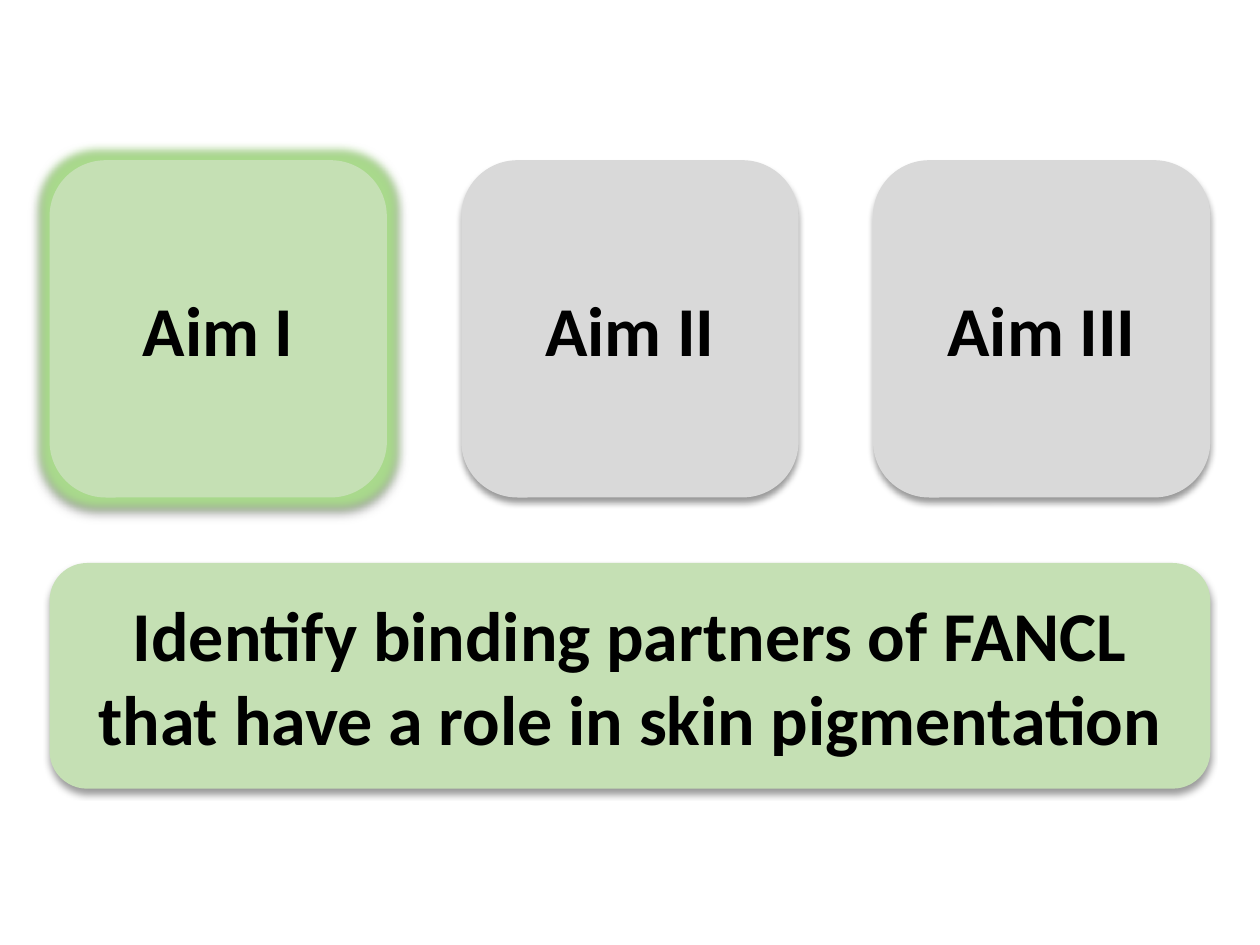
from lxml.etree import SubElement
from pptx import Presentation
from pptx.dml.color import RGBColor
from pptx.enum.shapes import MSO_SHAPE
from pptx.enum.text import MSO_ANCHOR, PP_ALIGN
from pptx.oxml.ns import qn
from pptx.util import Cm, Pt

HUES = {"green": "C5E0B4", "grey": "D9D9D9", "glow": "A9D98C", "black": "000000"}


class Deck:
    """Holds the style and the current slide."""

    font = "Calibri"
    size = Pt(40)

    def __init__(self):
        self.file = Presentation()
        self.file.slide_width, self.file.slide_height = Cm(25.4), Cm(19.05)
        self.slide = self.file.slides.add_slide(self.file.slide_layouts[6])

    def box(self, text, left, top, width, height, hue, glow=False):
        shape = self.slide.shapes.add_shape(
            MSO_SHAPE.ROUNDED_RECTANGLE, Cm(left), Cm(top), Cm(width), Cm(height))
        shape.fill.solid()
        shape.fill.fore_color.rgb = RGBColor.from_string(HUES[hue])
        shape.line.fill.background()
        self.shade(shape, glow)
        frame = shape.text_frame
        frame.word_wrap = True
        frame.vertical_anchor = MSO_ANCHOR.MIDDLE
        line = frame.paragraphs[0]
        line.text = text
        line.alignment = PP_ALIGN.CENTER
        line.font.name, line.font.size, line.font.bold = self.font, self.size, True
        line.font.color.rgb = RGBColor.from_string(HUES["black"])

    def shade(self, shape, glow):
        shape.shadow.inherit = False
        effects = shape.element.spPr.find(qn("a:effectLst"))
        if glow:
            halo = SubElement(effects, qn("a:glow"), rad=str(Pt(11)))
            SubElement(halo, qn("a:srgbClr"), val=HUES["glow"])
        drop = SubElement(effects, qn("a:outerShdw"), blurRad=str(Pt(4)),
                          dist=str(Pt(3)), dir="5400000", rotWithShape="0")
        tint = SubElement(drop, qn("a:srgbClr"), val=HUES["black"])
        SubElement(tint, qn("a:alpha"), val="40000")


def main():
    deck = Deck()
    edge, side, step = 1, 6.8, 8.3
    for i, name in enumerate(("Aim I", "Aim II", "Aim III")):
        first = i == 0
        deck.box(name, edge + i * step, 3.23, side, side,
                 "green" if first else "grey", glow=first)
    deck.box("Identify binding partners of FANCL that have a role in skin pigmentation",
             edge, 11.35, 2 * step + side, 4.55, "green")
    deck.file.save("out.pptx")


if __name__ == "__main__":
    main()
